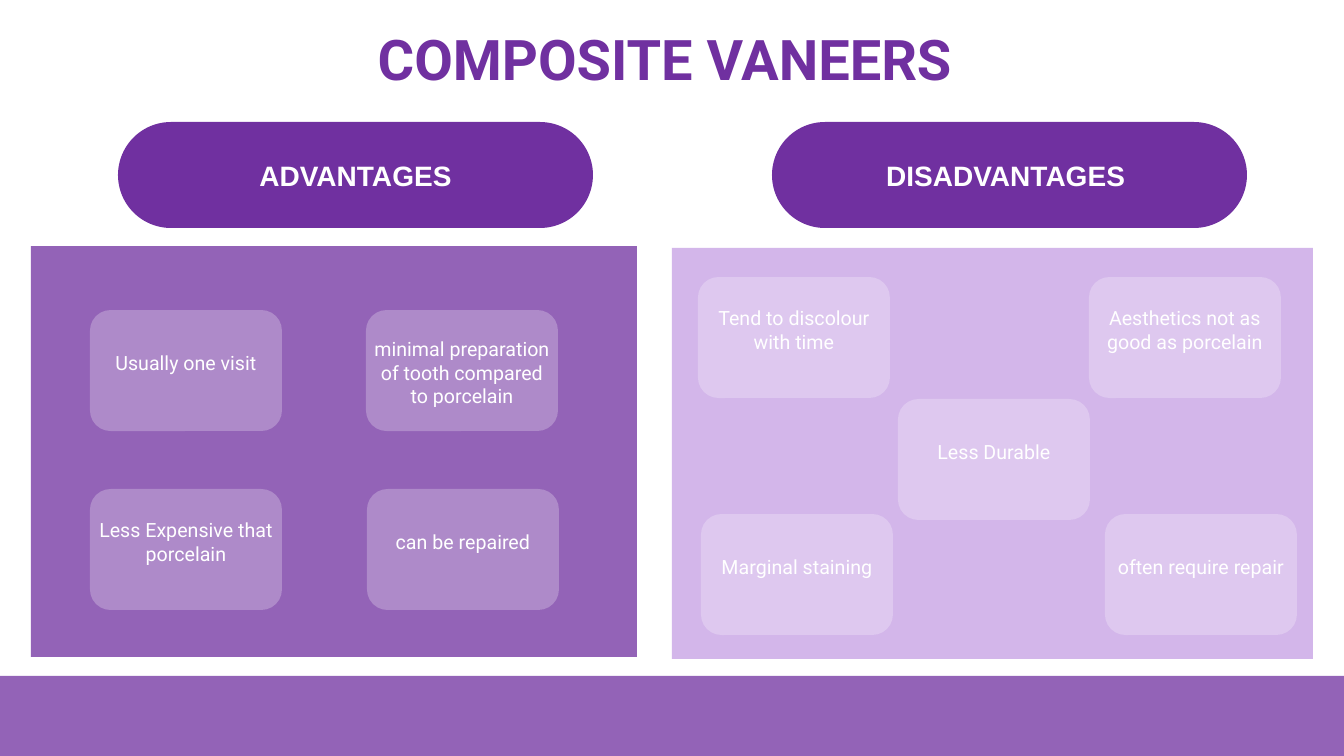
from lxml.etree import SubElement
from pptx import Presentation
from pptx.dml.color import RGBColor
from pptx.enum.shapes import MSO_SHAPE
from pptx.enum.text import MSO_ANCHOR, PP_ALIGN
from pptx.oxml.ns import qn
from pptx.util import Pt

PURPLE = RGBColor(0x70, 0x30, 0xA0)
LILAC = RGBColor(0xD3, 0xB6, 0xEA)
WHITE = RGBColor(0xFF, 0xFF, 0xFF)

SLIDE_WIDTH, SLIDE_HEIGHT = 1344, 756
EMU_PER_PX = 12192000 / SLIDE_WIDTH
CARD_SIZE = (192, 121)
PILL_SIZE = (475, 106)
PILL_TOP = 122
CARD_INSETS = (0, 5, 0, 21)
LOW_CARD_INSETS = (0, 9, 0, 5)
WIDE_INSETS = (10, 5, 10, 5)

TITLE = ("COMPOSITE VANEERS ", (205, 21, 933, 83))
PANELS = [
    ((0, 676, SLIDE_WIDTH, 80), PURPLE, 75),
    ((672, 248, 641, 411), LILAC, 100),
    ((31, 246, 606, 411), PURPLE, 75),
]
PILLS = [("ADVANTAGES", 118), ("DISADVANTAGES ", 772)]
CARDS = [
    ("Usually one visit", 90, 310, CARD_INSETS),
    ("Less Expensive that porcelain", 90, 489, CARD_INSETS),
    ("can be repaired", 367, 489, CARD_INSETS),
    ("Tend to discolour with time", 698, 277, CARD_INSETS),
    ("Marginal staining", 701, 514, CARD_INSETS),
    ("Less Durable", 898, 399, CARD_INSETS),
    ("minimal preparation of tooth compared to porcelain", 366, 310, LOW_CARD_INSETS),
    ("Aesthetics not as good as porcelain", 1089, 277, CARD_INSETS),
    ("often require repair", 1105, 514, CARD_INSETS),
]

TITLE_FONT = {"name": "Roboto", "size": Pt(40), "bold": True}
PILL_FONT = {"name": "Arial", "size": Pt(20), "bold": True}
CARD_FONT = {"name": "Roboto", "size": Pt(14), "bold": False}


def emu(*lengths):
    return [round(length * EMU_PER_PX) for length in lengths]


def add_box(slide, kind, box, color, opacity=100, corner=None):
    shape = slide.shapes.add_shape(kind, *emu(*box))
    shape.shadow.inherit = False
    shape.line.fill.background()
    shape.fill.solid()
    shape.fill.fore_color.rgb = color
    if opacity < 100:
        color_element = shape.fill._xPr.find(qn("a:solidFill"))[0]
        SubElement(color_element, qn("a:alpha"), val=str(opacity * 1000))
    if corner is not None:
        shape.adjustments[0] = corner
    return shape


def write_text(shape, text, font, color, insets, line_spacing=1.0):
    frame = shape.text_frame
    frame.word_wrap = True
    frame.vertical_anchor = MSO_ANCHOR.MIDDLE
    sides = ("margin_left", "margin_top", "margin_right", "margin_bottom")
    for side, length in zip(sides, emu(*insets)):
        setattr(frame, side, length)
    paragraph = frame.paragraphs[0]
    paragraph.alignment = PP_ALIGN.CENTER
    paragraph.line_spacing = line_spacing
    run = paragraph.add_run()
    run.text = text
    for attribute, value in font.items():
        setattr(run.font, attribute, value)
    run.font.color.rgb = color


def main():
    presentation = Presentation()
    presentation.slide_width, presentation.slide_height = emu(SLIDE_WIDTH, SLIDE_HEIGHT)
    slide = presentation.slides.add_slide(presentation.slide_layouts[6])

    for box, color, opacity in PANELS:
        add_box(slide, MSO_SHAPE.RECTANGLE, box, color, opacity)

    title, title_box = TITLE
    textbox = slide.shapes.add_textbox(*emu(*title_box))
    write_text(textbox, title, TITLE_FONT, PURPLE, WIDE_INSETS, 0.9)

    for text, left in PILLS:
        box = (left, PILL_TOP, *PILL_SIZE)
        pill = add_box(slide, MSO_SHAPE.ROUNDED_RECTANGLE, box, PURPLE, corner=0.5)
        write_text(pill, text, PILL_FONT, WHITE, WIDE_INSETS)

    for text, left, top, insets in CARDS:
        box = (left, top, *CARD_SIZE)
        card = add_box(slide, MSO_SHAPE.ROUNDED_RECTANGLE, box, WHITE, 25, 0.17)
        write_text(card, text, CARD_FONT, WHITE, insets)

    presentation.save("out.pptx")


if __name__ == "__main__":
    main()
